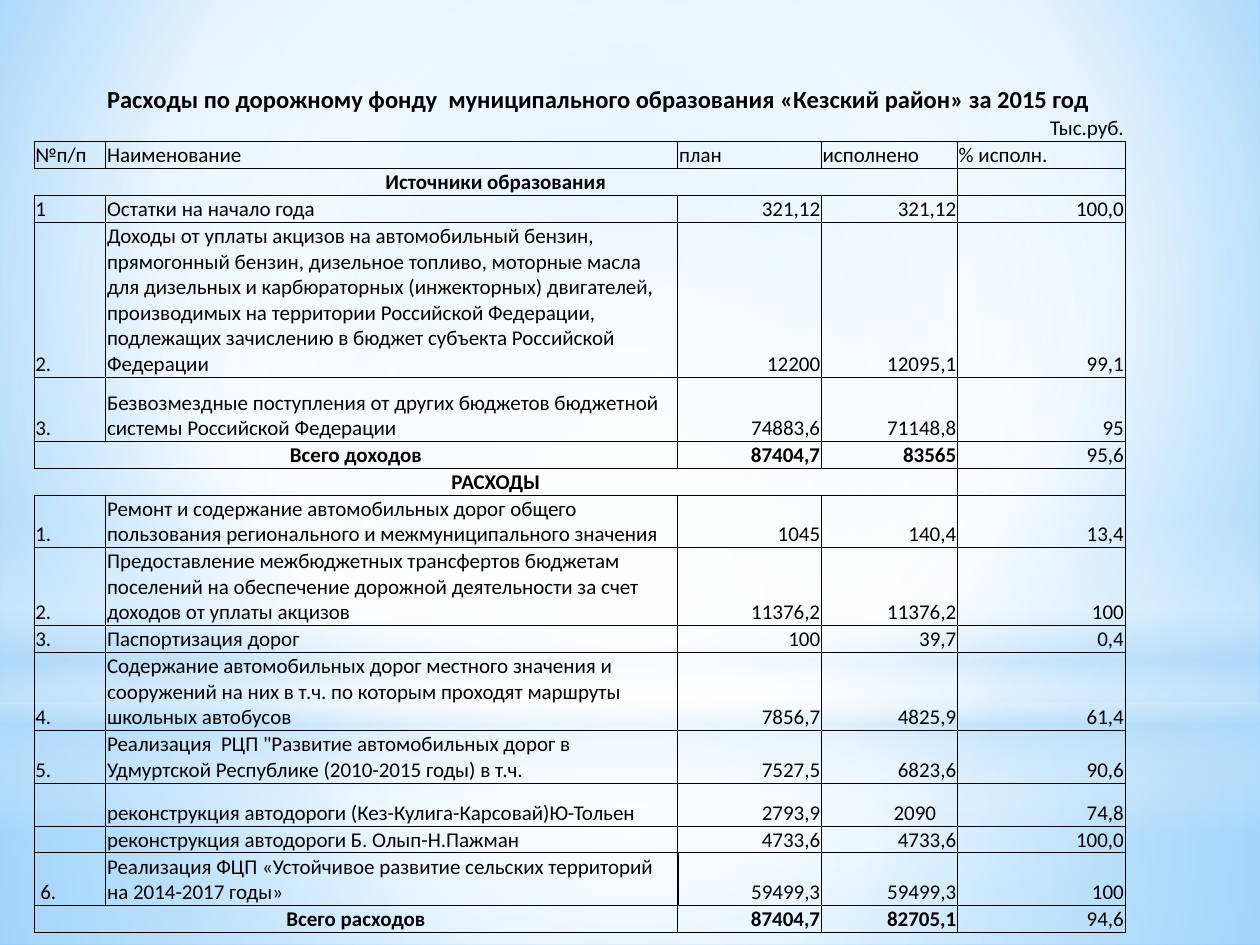
import pptx
import pptx.dml.color
import pptx.enum.shapes
import pptx.enum.text
import pptx.oxml
import pptx.oxml.ns
import pptx.util
from pptx.util import Inches

THEME = {
    "font": "Calibri", "title": 14, "body": 12, "text": "000000",
    "border": "000000", "thin": 0.5, "thick": 1,
    # Gradient stops: position %, colour, opacity %
    "background": [(0, "9ED5FF", 100), (60, "FFFFFF", 100), (100, "5BB9FF", 100)],
    "lower": [(0, "FFFFFF", 91), (37, "FFFFFF", 76), (100, "B4DCFA", 79)],
    "upper": [(0, "FFFFFF", 89), (48, "FFFFFF", 62), (100, "B4DCFA", 79)],
    "band": [(0, "FFFFFF", 0), (29, "FFFFFF", 30), (45, "B4DCFA", 40),
             (55, "FFFFFF", 26), (65, "B4DCFA", 60), (100, "FFFFFF", 0)],
    "glow": [(0, "FFFFFF", 100), (56, "FFFFFF", 0)],
}
NO_STYLE = "{2D5ABB26-0587-4C30-8999-92F81FD0307C}"

# Content: row height, row kind, texts
COLUMNS = [0.57, 4.54, 1.14, 1.08, 1.33, 0.65]
ROWS = [
    (0.47, "title", ["Расходы по дорожному фонду  муниципального образования «Кезский район» за 2015 год"]),
    (0.21, "unit", ["Тыс.руб."]),
    (0.21, "header", ["№п/п", "Наименование", "план", "исполнено", "% исполн."]),
    (0.21, "section", ["Источники образования"]),
    (0.21, "item", ["1", "Остатки на начало года", "321,12", "321,12", "100,0"]),
    (1.21, "item", ["2.", "Доходы от уплаты акцизов на автомобильный бензин, прямогонный бензин, "
                    "дизельное топливо, моторные масла для дизельных и карбюраторных (инжекторных) "
                    "двигателей, производимых на территории Российской Федерации, подлежащих "
                    "зачислению в бюджет субъекта Российской Федерации", "12200", "12095,1", "99,1"]),
    (0.51, "item", ["3.", "Безвозмездные поступления от других бюджетов бюджетной системы "
                    "Российской Федерации", "74883,6", "71148,8", "95"]),
    (0.21, "total", ["Всего доходов", "87404,7", "83565", "95,6"]),
    (0.21, "section", ["РАСХОДЫ"]),
    (0.41, "item", ["1.", "Ремонт и содержание автомобильных дорог общего пользования "
                    "регионального и межмуниципального значения", "1045", "140,4", "13,4"]),
    (0.61, "item", ["2.", "Предоставление межбюджетных трансфертов бюджетам поселений на обеспечение "
                    "дорожной деятельности за счет доходов от уплаты акцизов", "11376,2", "11376,2", "100"]),
    (0.21, "item", ["3.", "Паспортизация дорог", "100", "39,7", "0,4"]),
    (0.61, "item", ["4.", "Содержание автомобильных дорог местного значения и сооружений на них "
                    "в т.ч. по которым проходят маршруты школьных автобусов", "7856,7", "4825,9", "61,4"]),
    (0.41, "item", ["5.", "Реализация  РЦП \"Развитие автомобильных дорог в Удмуртской Республике "
                    "(2010-2015 годы) в т.ч.", "7527,5", "6823,6", "90,6"]),
    (0.34, "item", ["", "реконструкция автодороги (Кез-Кулига-Карсовай)Ю-Тольен", "2793,9", "2090", "74,8"]),
    (0.21, "item", ["", "реконструкция автодороги Б. Олып-Н.Пажман", "4733,6", "4733,6", "100,0"]),
    (0.41, "item", ["6.", "Реализация ФЦП «Устойчивое развитие сельских территорий на 2014-2017 годы»",
                    "59499,3", "59499,3", "100"]),
    (0.21, "total", ["Всего расходов", "87404,7", "82705,1", "94,6"]),
]
# Row kind: first column, columns spanned by the first text, alignments, bold columns
L, C, R = (getattr(pptx.enum.text.PP_ALIGN, a) for a in ("LEFT", "CENTER", "RIGHT"))
KINDS = {
    "title": (1, 5, [L], {1}),
    "unit": (3, 2, [R], set()),
    "header": (0, 1, [L] * 5, set()),
    "section": (0, 4, [C], {0}),
    "item": (0, 1, [L, L, R, R, R], set()),
    "total": (0, 2, [C, R, R, R], {0, 2, 3}),
}
FIRST_GRID_ROW, GRID_COLUMNS = 2, 5
THICK_RIGHT = {(15, 2), (16, 1), (16, 2)}
INDENTS = {(14, 3): ("margin_right", 0.17), (16, 0): ("margin_left", 0.05)}


def gradient(stops, to=None):
    """Circular gradient around the rectangle `to`, or a vertical one without it."""
    gs = "".join(f'<a:gs pos="{pos * 1000}"><a:srgbClr val="{color}">'
                 f'<a:alpha val="{alpha * 1000}"/></a:srgbClr></a:gs>' for pos, color, alpha in stops)
    if to:
        l, t, r, b = (v * 1000 for v in to)
        way = f'<a:path path="circle"><a:fillToRect l="{l}" t="{t}" r="{r}" b="{b}"/></a:path>'
    else:
        way = '<a:lin ang="5400000" scaled="0"/>'
    return pptx.oxml.parse_xml(f'<a:gradFill {pptx.oxml.ns.nsdecls("a")} rotWithShape="1">'
                               f'<a:gsLst>{gs}</a:gsLst>{way}</a:gradFill>')


def replace_fill(parent, fill):
    old = parent.find(pptx.oxml.ns.qn("a:solidFill"))
    parent.replace(old, fill)


def write(cell, text, align, bold, size):
    p = cell.text_frame.paragraphs[0]
    p.alignment = align
    r = p.add_run()
    r.text = text
    r.font.name, r.font.size, r.font.bold = THEME["font"], pptx.util.Pt(size), bold
    r.font.color.rgb = pptx.dml.color.RGBColor.from_string(THEME["text"])


def set_borders(cell, widths):
    tc_pr = cell._tc.get_or_add_tcPr()
    for i, side in enumerate("LRTB"):
        width = widths.get(side)
        fill = f'<a:solidFill><a:srgbClr val="{THEME["border"]}"/></a:solidFill>' if width else "<a:noFill/>"
        tc_pr.insert(i, pptx.oxml.parse_xml(
            f'<a:ln{side} {pptx.oxml.ns.nsdecls("a")} w="{pptx.util.Pt(width or 0)}">{fill}</a:ln{side}>'))


def grid_borders(row, col, kind):
    """Lines around a grid cell, leaving out those inside a merged one."""
    if row < FIRST_GRID_ROW or col >= GRID_COLUMNS:
        return {}
    span = KINDS[kind][1]
    widths = dict.fromkeys("LRTB", THEME["thin"])
    if 0 < col < span or (kind == "section" and col == 0):
        del widths["L"]
    if 0 < col < span - 1:
        del widths["R"]
    for side, edge in (("R", col), ("L", col - 1)):
        if (row, edge) in THICK_RIGHT:
            widths[side] = THEME["thick"]
    return widths


prs = pptx.Presentation()
prs.slide_width, prs.slide_height = Inches(10), Inches(7.5)
s = prs.slides.add_slide(prs.slide_layouts[6])

# Background
s.background.fill.solid()
s.background.fill.fore_color.rgb = pptx.dml.color.RGBColor(255, 255, 255)
replace_fill(s.background._cSld.bg.bgPr, gradient(THEME["background"], (20, 10, 20, 60)))

# Soft light layers
CENTER = (50, 50, 50, 50)
for preset, top, height, stops, to in [
    ("RECTANGLE", 5.58, 1.92, "lower", CENTER),
    ("RECTANGLE", 0, 5.58, "upper", CENTER),
    ("RECTANGLE", 4.12, 2.5, "band", None),
    ("OVAL", 1.75, 5.58, "glow", CENTER),
]:
    sp = s.shapes.add_shape(getattr(pptx.enum.shapes.MSO_SHAPE, preset),
                            0, Inches(top), Inches(10), Inches(height))
    sp.shadow.inherit = False
    sp.line.fill.background()
    sp.fill.solid()
    replace_fill(sp._element.spPr, gradient(THEME[stops], to))

# Table frame
frame = s.shapes.add_table(len(ROWS), len(COLUMNS), Inches(0.27), Inches(0.44),
                           Inches(sum(COLUMNS)), Inches(sum(row[0] for row in ROWS)))
table = frame.table
table.first_row = table.horz_banding = False
table._tbl.tblPr.find(pptx.oxml.ns.qn("a:tableStyleId")).text = NO_STYLE
for column, width in zip(table.columns, COLUMNS):
    column.width = Inches(width)

# Table rows
for i, (height, kind, texts) in enumerate(ROWS):
    table.rows[i].height = Inches(height)
    start, span, aligns, bold = KINDS[kind]
    size = THEME["title" if kind == "title" else "body"]
    for j in range(len(COLUMNS)):
        cell = table.cell(i, j)
        cell.fill.background()
        cell.vertical_anchor = pptx.enum.text.MSO_ANCHOR.BOTTOM
        cell.margin_left = cell.margin_right = cell.margin_top = Inches(0.01)
        cell.margin_bottom = 0
        if (i, j) in INDENTS:
            side, indent = INDENTS[i, j]
            setattr(cell, side, Inches(indent))
        set_borders(cell, grid_borders(i, j, kind))
        k = 0 if j == start else j - start - span + 1
        if j == start or (j >= start + span and k < len(texts)):
            write(cell, texts[k], aligns[k], j in bold, size)
        if not cell.text_frame.text:
            p = cell.text_frame.paragraphs[0]
            for r in p.runs:
                p._p.remove(r._r)
            p._p.append(pptx.oxml.parse_xml(
                f'<a:endParaRPr {pptx.oxml.ns.nsdecls("a")} sz="{THEME["body"] * 100}"/>'))
    if span > 1:
        table.cell(i, start).merge(table.cell(i, start + span - 1))

prs.save("out.pptx")
